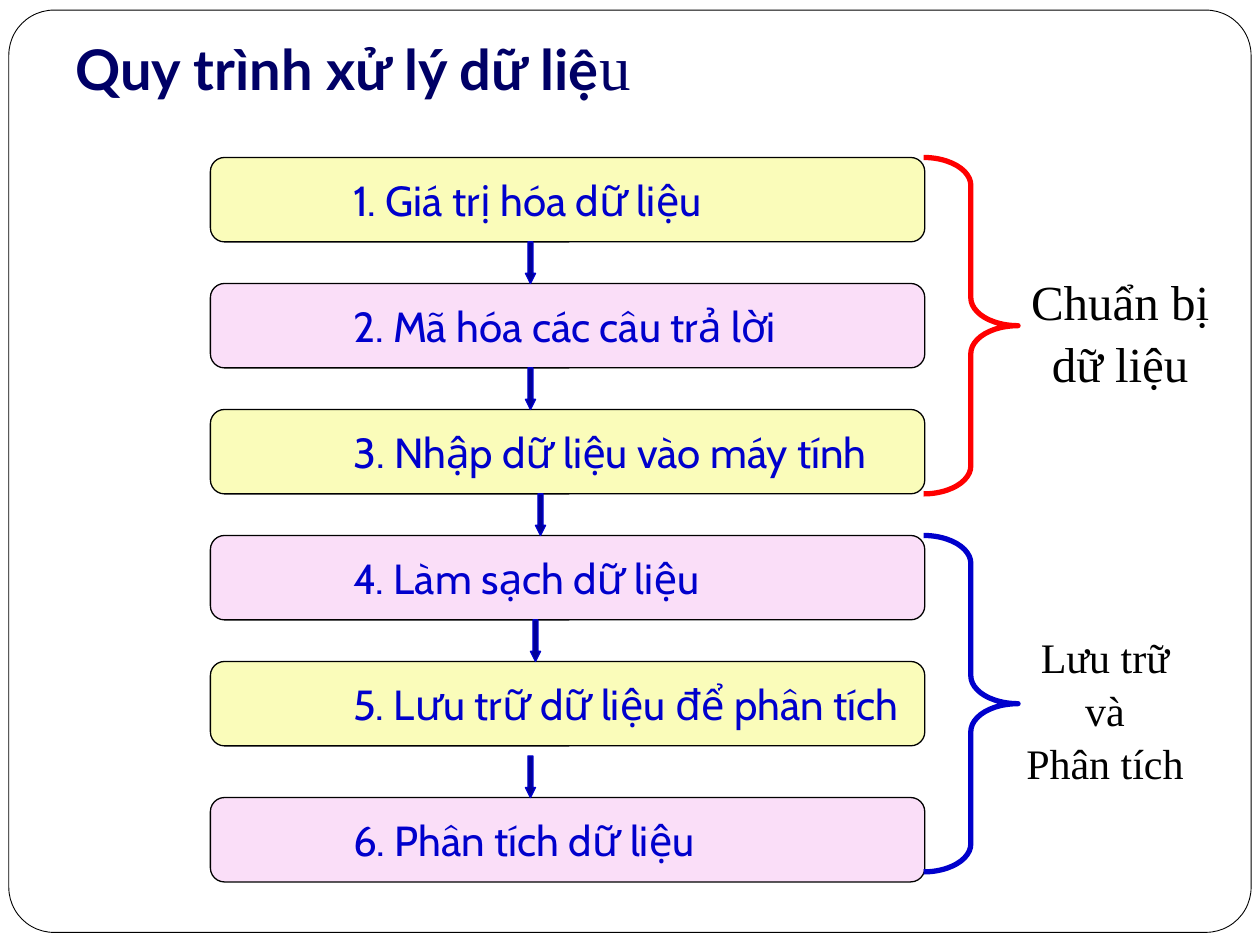
import pptx
import pptx.util
import pptx.dml.color
from pptx.enum.shapes import MSO_SHAPE
from pptx.enum.text import MSO_ANCHOR, PP_ALIGN

Inches = pptx.util.Inches
Pt = pptx.util.Pt

COLORS = {
    "white": "FFFFFF",
    "black": "000000",
    "title": "000066",
    "step_text": "0000CC",
    "yellow": "FAFCBA",
    "pink": "FADEF8",
    "arrow": "000099",
    "blue": "0000CC",
    "red": "FF0000",
}

STEPS = [
    "1. Giá trị hóa dữ liệu",
    "2. Mã hóa các câu trả lời",
    "3. Nhập dữ liệu vào máy tính",
    "4. Làm sạch dữ liệu",
    "5. Lưu trữ dữ liệu để phân tích",
    "6. Phân tích dữ liệu",
]
STEP_TOPS = [1.25, 2.25, 3.25, 4.25, 5.25, 6.33]
ARROW_OFFSETS = [2.5, 2.5, 2.58, 2.54, 2.5]
STEP_HEIGHT = 0.67
ARROW_WIDTH, ARROW_HEIGHT = 0.08, 0.33


def rgb(name):
    return pptx.dml.color.RGBColor.from_string(COLORS[name])


def add_preset(slide, kind, box, adjustments, fill, line, line_width):
    preset = slide.shapes.add_shape(kind, *map(Inches, box))
    preset.shadow.inherit = False
    for index, value in enumerate(adjustments):
        preset.adjustments[index] = value
    if fill:
        preset.fill.solid()
        preset.fill.fore_color.rgb = rgb(fill)
    else:
        preset.fill.background()
    preset.line.color.rgb = rgb(line)
    preset.line.width = Pt(line_width)
    return preset


def add_run(paragraph, text, font, size, color, bold=False):
    run = paragraph.add_run()
    run.text = text
    run.font.name = font
    run.font.size = Pt(size)
    run.font.bold = bold
    run.font.color.rgb = rgb(color)


def add_frame(slide, box):
    add_preset(slide, MSO_SHAPE.ROUNDED_RECTANGLE, box, [0.049], "white", "black", 0.5)


def add_title(slide, box):
    frame = slide.shapes.add_textbox(*map(Inches, box)).text_frame
    frame.word_wrap = True
    frame.vertical_anchor = MSO_ANCHOR.BOTTOM
    frame.margin_bottom = Inches(0.1)
    heading = frame.paragraphs[0]
    add_run(heading, "Quy trình xử lý dữ liệ", "Lato", 32, "title", True)
    add_run(heading, "u", "Times New Roman", 36, "title")


def add_step(slide, box, text, fill):
    step = add_preset(slide, MSO_SHAPE.ROUNDED_RECTANGLE, box, [0.167], fill, "black", 0.75)
    frame = step.text_frame
    frame.word_wrap = True
    frame.vertical_anchor = MSO_ANCHOR.MIDDLE
    frame.margin_left = Inches(1.1)
    frame.margin_right = Inches(0)
    frame.paragraphs[0].alignment = PP_ALIGN.LEFT
    add_run(frame.paragraphs[0], text, "Cabin", 24, "step_text")


def add_process(slide, left, width):
    for index, (top, text) in enumerate(zip(STEP_TOPS, STEPS)):
        fill = "pink" if index % 2 else "yellow"
        add_step(slide, (left, top, width, STEP_HEIGHT), text, fill)
    for next_top, offset in zip(STEP_TOPS[1:], ARROW_OFFSETS):
        box = (left + offset, next_top - ARROW_HEIGHT, ARROW_WIDTH, ARROW_HEIGHT)
        add_preset(slide, MSO_SHAPE.DOWN_ARROW, box, [0.5, 1], "arrow", "blue", 0.75)


def add_phase(slide, box, color, lines, size, label_center):
    left, top, width, height = box
    add_preset(slide, MSO_SHAPE.RIGHT_BRACE, box, [0.296, 0.5], None, color, 3)
    label_width = 1.7
    label_box = (left + label_center - label_width / 2, top + 0.43, label_width, 1.89)
    frame = slide.shapes.add_textbox(*map(Inches, label_box)).text_frame
    frame.word_wrap = True
    frame.vertical_anchor = MSO_ANCHOR.MIDDLE
    for index, text in enumerate(lines):
        paragraph = frame.add_paragraph() if index else frame.paragraphs[0]
        paragraph.alignment = PP_ALIGN.CENTER
        paragraph.line_spacing = 1.05
        add_run(paragraph, text, "Times New Roman", size, "black")


def main():
    deck = pptx.Presentation()
    deck.slide_width = Inches(10)
    deck.slide_height = Inches(7.5)
    slide = deck.slides.add_slide(deck.slide_layouts[6])
    add_frame(slide, (0.07, 0.08, 9.86, 7.32))
    add_title(slide, (0.5, 0.17, 7.58, 0.75))
    add_process(slide, 1.67, 5.67)
    add_phase(slide, (7.33, 1.25, 0.75, 2.67), "red", ["Chuẩn bị", "dữ liệu"], 28, 1.56)
    add_phase(slide, (7.33, 4.25, 0.75, 2.67), "blue", ["Lưu trữ", "và", "Phân tích"], 24, 1.44)
    deck.save("out.pptx")


if __name__ == "__main__":
    main()
